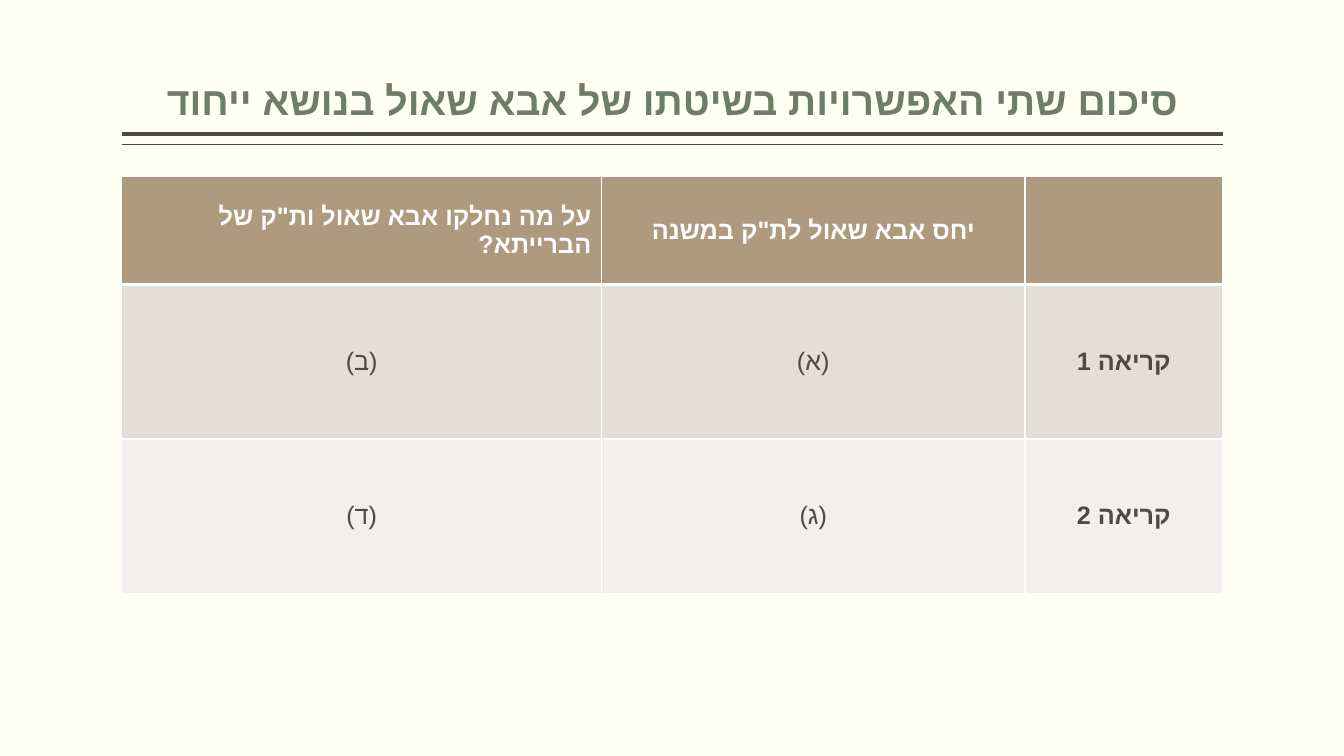
from pptx import Presentation
from pptx.dml.color import RGBColor
from pptx.enum.shapes import MSO_CONNECTOR
from pptx.enum.text import MSO_ANCHOR, PP_ALIGN
from pptx.oxml.ns import qn
from pptx.util import Cm, Pt
from lxml import etree

# Content
TITLE = "סיכום שתי האפשרויות בשיטתו של אבא שאול בנושא ייחוד"
ROWS = [
    ['על מה נחלקו אבא שאול ות"ק של הברייתא?', 'יחס אבא שאול לת"ק במשנה', ""],
    ["(ב)", "(א)", "קריאה 1"],
    ["(ד)", "(ג)", "קריאה 2"],
]

# Look
COLORS = {"back": "FFFFF3", "title": "6D7D66", "dark": "514843",
          "white": "FFFFFF", "head": "AE9A7E"}
BANDS = [COLORS["head"], "E3DED8", "F2EFEC"]
LINES = [(3.38, 3), (3.64, 1)]
WIDTHS = [12.09, 10.67, 4.98]
HEIGHTS = [2.72, 3.89, 3.89]
LEFT, TOP, WIDE = 3.07, 4.45, sum(WIDTHS)
CENTER, RIGHT = PP_ALIGN.CENTER, PP_ALIGN.RIGHT
MIDDLE, BOTTOM = MSO_ANCHOR.MIDDLE, MSO_ANCHOR.BOTTOM
STRAIGHT = MSO_CONNECTOR.STRAIGHT


def write(frame, text, font="Lato", size=18, color="dark", bold=False,
          align=CENTER, rtl=True, space=None):
    para = frame.paragraphs[0]
    para.alignment = align
    para.line_spacing = space
    if rtl:
        para._p.get_or_add_pPr().set("rtl", "1")
    run = para.add_run()
    run.text = text
    run.font.name = font
    run.font.size = Pt(size)
    run.font.bold = bold
    run.font.color.rgb = RGBColor.from_string(COLORS[color])
    etree.SubElement(run._r.rPr, qn("a:cs"), typeface="Arial")


def border(cell, head):
    props = cell._tc.get_or_add_tcPr()
    for spot, side in enumerate(("lnL", "lnR", "lnT", "lnB")):
        width = 3 if head and side == "lnB" else 1
        line = etree.Element(qn("a:" + side), w=str(Pt(width)))
        fill = etree.SubElement(line, qn("a:solidFill"))
        etree.SubElement(fill, qn("a:srgbClr"), val=COLORS["white"])
        props.insert(spot, line)


# Slide
deck = Presentation()
deck.slide_width, deck.slide_height = Cm(33.87), Cm(19.05)
slide = deck.slides.add_slide(deck.slide_layouts[5])
slide.background.fill.solid()
slide.background.fill.fore_color.rgb = RGBColor.from_string(COLORS["back"])

# Double rule
for y, width in LINES:
    rule = slide.shapes.add_connector(
        STRAIGHT, Cm(LEFT + WIDE), Cm(y), Cm(LEFT), Cm(y))
    rule.line.color.rgb = RGBColor.from_string(COLORS["dark"])
    rule.line.width = Pt(width)
    etree.SubElement(rule._element.spPr, qn("a:effectLst"))

# Title
title = slide.shapes.title
title.left, title.top, title.width, title.height = (
    Cm(LEFT), Cm(0.2), Cm(WIDE), Cm(3.05))
frame = title.text_frame
frame.word_wrap = True
frame.vertical_anchor = BOTTOM
frame.margin_left = frame.margin_right = 0
write(frame, TITLE, font="Arial", size=28, color="title", bold=True,
      rtl=False, space=0.9)

# Table
table = slide.shapes.add_table(
    len(ROWS), len(WIDTHS), Cm(LEFT), Cm(TOP), Cm(WIDE), Cm(sum(HEIGHTS))).table
for col, width in zip(table.columns, WIDTHS):
    col.width = Cm(width)
for r, texts in enumerate(ROWS):
    table.rows[r].height = Cm(HEIGHTS[r])
    head = r == 0
    for c, text in enumerate(texts):
        cell = table.cell(r, c)
        cell.vertical_anchor = MIDDLE
        cell.fill.solid()
        cell.fill.fore_color.rgb = RGBColor.from_string(BANDS[r])
        border(cell, head)
        if text:
            write(cell.text_frame, text, color="white" if head else "dark",
                  bold=head or c == 2, align=RIGHT if head and c == 0 else CENTER)

deck.save("out.pptx")
